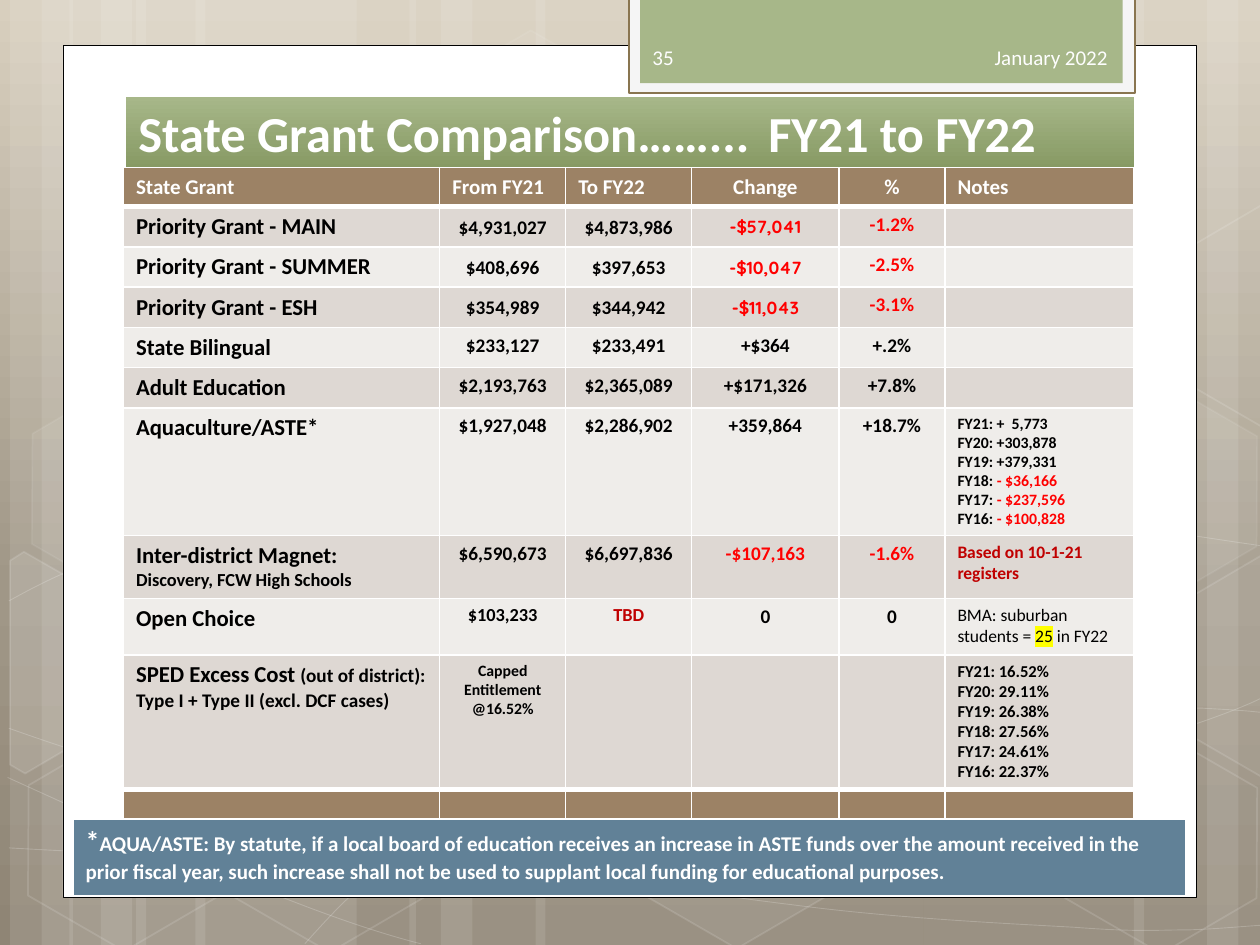
from dataclasses import dataclass
from typing import Optional

from lxml import etree
from pptx import Presentation
from pptx.dml.color import RGBColor
from pptx.enum import shapes, text
from pptx.oxml.ns import qn
from pptx.util import Inches, Pt


class Theme:
    FONT, ALT_FONT = "Calibri", "Quicksand"
    WHITE, BLACK, OFF_WHITE, TAB = "FFFFFF", "000000", "FEFEFE", "F5F5F5"
    GREEN, DARK_GREEN, TAB_LINE = "A7B789", "879A64", "897550"
    BROWN, BAND, LIGHT_BAND, BLUE = "9C8265", "DED8D3", "EFEDEA", "618197"
    RED, DARK_RED, YELLOW = "FF0000", "C00000", "FFFF00"
    BACKDROP = ((0, "D8CFBE"), (62, "A09787"), (100, "8F8575"))
    TITLE, GRANT, BODY, SMALL, HEADER = 28.8, 13, 11, 10.5, 12
    NOTE, HISTORY, FINE, STAR, EMPTY = 10, 9.5, 9, 16, 8


@dataclass
class Span:
    words: str
    size: float
    color: str = Theme.BLACK
    bold: bool = True
    font: str = Theme.FONT
    highlight: Optional[str] = None


def rgb(code):
    return RGBColor.from_string(code)


def child(parent, tag, **attributes):
    return etree.SubElement(parent, qn(tag), **attributes)


def set_alpha(color_parent, percent):
    color = color_parent.find(".//" + qn("a:srgbClr"))
    child(color, "a:alpha", val=str(percent * 1000))


def set_gradient(fill, owner, stops):
    """Fill downwards with (percent, colour) stops; owner holds the fill's XML."""
    fill.gradient()
    fill.gradient_angle = 270
    stop_list = owner.find(".//" + qn("a:gsLst"))
    for old in list(stop_list):
        stop_list.remove(old)
    for percent, color in stops:
        stop = child(stop_list, "a:gs", pos=str(percent * 1000))
        child(stop, "a:srgbClr", val=color)


def paint(shape, fill=None, fill_alpha=100, line=None, width=1, line_alpha=100):
    shape.shadow.inherit = False
    if fill:
        shape.fill.solid()
        shape.fill.fore_color.rgb = rgb(fill)
        if fill_alpha < 100:
            set_alpha(shape._element.spPr.find(qn("a:solidFill")), fill_alpha)
    else:
        shape.fill.background()
    if line:
        shape.line.color.rgb = rgb(line)
        shape.line.width = Pt(width)
        if line_alpha < 100:
            set_alpha(shape._element.spPr.find(qn("a:ln")), line_alpha)
    else:
        shape.line.fill.background()
    return shape


def add_preset(slide, box, kind=shapes.MSO_SHAPE.RECTANGLE):
    return slide.shapes.add_shape(kind, *map(Inches, box))


def add_outline(slide, points, close):
    corners = [(Inches(x), Inches(y)) for x, y in points]
    builder = slide.shapes.build_freeform(*corners[0])
    builder.add_line_segments(corners[1:], close=close)
    return builder.convert_to_shape()


def add_curve(slide, start, *segments):
    """Draw a chain of cubic curves, each given as two control points and an end."""
    curve = add_outline(slide, [start, *(segment[4:] for segment in segments)], False)
    lines = list(curve._element.iter(qn("a:lnTo")))
    for line, segment in zip(lines, segments):
        line.tag = qn("a:cubicBezTo")
        line.remove(line[0])
        for x, y in zip(segment[::2], segment[1::2]):
            child(line, "a:pt", x=str(Inches(x) - curve.left), y=str(Inches(y) - curve.top))
    return curve


def write(frame, paragraphs, align=None, spacing=None):
    """Write a list of paragraphs, each a list of spans."""
    frame.word_wrap = True
    for index, spans in enumerate(paragraphs):
        paragraph = frame.add_paragraph() if index else frame.paragraphs[0]
        paragraph.alignment = align
        paragraph.line_spacing = spacing
        for span in spans:
            run = paragraph.add_run()
            run.text = span.words
            font = run.font
            font.size, font.bold, font.name = Pt(span.size), span.bold, span.font
            font.color.rgb = rgb(span.color)
            if span.highlight:
                mark = etree.Element(qn("a:highlight"))
                child(mark, "a:srgbClr", val=span.highlight)
                run._r.rPr.find(qn("a:solidFill")).addnext(mark)


def style_cell(cell, fill, top=1, bottom=1):
    properties = cell._tc.get_or_add_tcPr()
    for side, width in (("L", 1), ("R", 1), ("T", top), ("B", bottom)):
        border = child(properties, "a:ln" + side, w=str(Pt(width)))
        child(child(border, "a:solidFill"), "a:srgbClr", val=Theme.WHITE)
    cell.fill.solid()
    cell.fill.fore_color.rgb = rgb(fill)


def add_grid(slide, left, top, widths, heights):
    table = slide.shapes.add_table(len(heights), len(widths), Inches(left), Inches(top),
                                   Inches(sum(widths)), Inches(sum(heights))).table
    table.first_row = table.horz_banding = False
    for column, width in zip(table.columns, widths):
        column.width = Inches(width)
    for row, height in zip(table.rows, heights):
        row.height = Inches(height)
    return table


def add_backdrop(slide):
    set_gradient(slide.background.fill, slide._element, Theme.BACKDROP)
    for left, width in ((1.08, 1.75), (0.08, 0.5), (0.33, 0.83), (1.55, 1.75), (0.55, 0.5),
                        (0.8, 0.83), (7.33, 1.75), (9.58, 0.5), (9, 0.83), (4.25, 3.08),
                        (3.25, 0.5), (3.5, 0.83)):
        paint(add_preset(slide, (left, 0, width, 7.5)), Theme.WHITE, 10)
    curves = (
        ((0.07, 6.73), (0.61, 6.76, 1.15, 6.79, 1.9, 6.78), (2.65, 6.77, 3.58, 6.75, 4.58, 6.65),
         (5.58, 6.55, 7, 6.36, 7.92, 6.17), (8.83, 5.98, 9.77, 5.68, 10.07, 5.51)),
        ((0.07, 4.77), (0.36, 4.61, 0.65, 4.46, 1.21, 4.31), (1.78, 4.16, 2.59, 3.94, 3.47, 3.87),
         (4.36, 3.8, 5.44, 3.79, 6.54, 3.87), (7.64, 3.95, 9.47, 4.26, 10.07, 4.34)),
        ((0.06, 6.17), (1.27, 6.72, 2.47, 7.27, 3.34, 7.49)),
        ((0.07, 5.78), (0.38, 5.89, 0.7, 6, 1.28, 6.16), (1.86, 6.31, 2.73, 6.56, 3.57, 6.73),
         (4.4, 6.9, 5.45, 7.08, 6.28, 7.18), (7.11, 7.29, 8, 7.33, 8.53, 7.36),
         (9.05, 7.4, 9.19, 7.38, 9.45, 7.38), (9.71, 7.37, 9.89, 7.35, 10.07, 7.34)),
        ((2.42, 7.49), (2.6, 7.29, 2.78, 7.09, 3.02, 6.91), (3.26, 6.73, 3.6, 6.53, 3.88, 6.39),
         (4.16, 6.25, 4.33, 6.19, 4.7, 6.09), (5.06, 5.99, 5.73, 5.85, 6.08, 5.78),
         (6.44, 5.71, 6.49, 5.71, 6.8, 5.69), (7.11, 5.66, 7.6, 5.63, 7.94, 5.62),
         (8.29, 5.61, 8.86, 5.62, 8.86, 5.62), (8.86, 5.62, 9.53, 5.62, 9.53, 5.62),
         (9.71, 5.63, 9.88, 5.64, 9.97, 5.65), (10.06, 5.66, 10.03, 5.65, 10.06, 5.66)))
    for curve in curves:
        paint(add_curve(slide, *curve), None, 100, Theme.WHITE, 0.5, 20)
    for left, top, alpha, line_alpha in (
            (3.34, 0.36, 4, 8), (4.97, 5.89, 6, 12), (0.11, 5.91, 0, 12), (0.14, 3.12, 7, 8),
            (1.74, 5.92, 0, 12), (7.53, 4.53, 10, 12), (8.34, 5.93, 0, 12), (8.34, 3.14, 7, 8)):
        hexagon = add_preset(slide, (left, top, 1.75, 1.52), shapes.MSO_SHAPE.HEXAGON)
        hexagon.rotation = 30
        hexagon.adjustments[0], hexagon.adjustments[1] = 0.285, 1.155
        paint(hexagon, Theme.WHITE if alpha else None, alpha, Theme.WHITE, 1, line_alpha)
    for alpha, points in (
            (10, ((0.08, 4.45), (0.19, 4.38), (0.96, 4.82), (0.95, 5.7), (0.2, 6.14), (0.08, 6.07))),
            (4, ((9.26, 4.85), (10.01, 4.41), (10.09, 4.46), (10.09, 6.13), (10.02, 6.17), (9.26, 5.73))),
            (0, ((9.26, 2.07), (10.01, 1.63), (10.1, 1.68), (10.09, 3.35), (10.02, 3.39), (9.26, 2.95)))):
        paint(add_outline(slide, points, True), Theme.WHITE if alpha else None, alpha, Theme.WHITE, 1, 12)


def add_page_tab(slide, left, width):
    paint(add_preset(slide, (left, -0.02, width, 0.76)), Theme.TAB, line=Theme.TAB_LINE, width=1.25)
    paint(add_preset(slide, (left + 0.09, -0.02, width - 0.19, 0.68)), Theme.GREEN)
    for words, x, w, align in (("January 2022", left + 1.57, 2.33, text.PP_ALIGN.RIGHT),
                               ("35", left + 0.09, 1.46, text.PP_ALIGN.LEFT)):
        frame = slide.shapes.add_textbox(*map(Inches, (x, 0.25, w, 0.4))).text_frame
        frame.vertical_anchor = text.MSO_ANCHOR.MIDDLE
        write(frame, [[Span(words, Theme.HEADER, Theme.OFF_WHITE, False)]], align)


def add_title(slide, box):
    banner = paint(add_preset(slide, box))
    set_gradient(banner.fill, banner._element, ((0, Theme.GREEN), (100, Theme.DARK_GREEN)))
    banner.text_frame.vertical_anchor = text.MSO_ANCHOR.MIDDLE
    write(banner.text_frame, [[Span("State Grant Comparison……... \tFY21 to FY22", Theme.TITLE, Theme.WHITE)]],
          text.PP_ALIGN.LEFT)


HEADINGS = ("State Grant", "From FY21", "To FY22", "Change", "%", "Notes")
ASTE_HISTORY = [[Span(f"FY{year}: ", Theme.FINE),
                 Span(change, Theme.FINE, Theme.RED if change[0] == "-" else Theme.BLACK)]
                for year, change in ((21, "+  5,773"), (20, "+303,878"), (19, "+379,331"),
                                     (18, "- $36,166"), (17, "- $237,596"), (16, "- $100,828"))]
SPED_HISTORY = [[Span(f"FY{year}: {share}%", Theme.HISTORY)] for year, share in
                ((21, 16.52), (20, 29.11), (19, 26.38), (18, 27.56), (17, 24.61), (16, 22.37))]
CAPPED = [[Span(words, Theme.FINE)] for words in ("Capped Entitlement", "@16.52%")]
MAGNET = [[Span("Inter-district Magnet:", Theme.GRANT)], [Span("Discovery, FCW High Schools", Theme.SMALL)]]
SPED = [[Span("SPED Excess Cost ", Theme.GRANT),
         Span("(out of district): Type I + Type II (excl. DCF cases)", Theme.BODY)]]
CHOICE_NOTE = [[Span("BMA: suburban students = ", Theme.NOTE, bold=False),
                Span("25", Theme.NOTE, bold=False, highlight=Theme.YELLOW),
                Span(" in FY22", Theme.NOTE, bold=False)]]
GRANTS = (
    ("Priority Grant - MAIN", "$4,931,027", "$4,873,986", "-$57,041", "-1.2%", ""),
    ("Priority Grant - SUMMER", "$408,696", "$397,653", "-$10,047", "-2.5%", ""),
    ("Priority Grant - ESH", "$354,989", "$344,942", "-$11,043", "-3.1%", ""),
    ("State Bilingual", "$233,127", "$233,491", "+$364", "+.2%", ""),
    ("Adult Education", "$2,193,763", "$2,365,089", "+$171,326", "+7.8%", ""),
    ("Aquaculture/ASTE*", "$1,927,048", "$2,286,902", "+359,864", "+18.7%", ASTE_HISTORY),
    (MAGNET, "$6,590,673", "$6,697,836", "-$107,163", "-1.6%",
     [[Span("Based on 10-1-21 registers", Theme.NOTE, Theme.DARK_RED)]]),
    ("Open Choice", [[Span("$103,233", Theme.SMALL)]], [[Span("TBD", Theme.SMALL, Theme.DARK_RED)]],
     "0", "0", CHOICE_NOTE),
    (SPED, CAPPED, "", "", "", SPED_HISTORY))


def add_grants(slide, left, top):
    table = add_grid(slide, left, top, (2.51, 1, 1, 1.17, 0.84, 1.5),
                     (0.31, *[0.32] * 5, 1.01, 0.5, 0.45, 1.07, 0.22))
    last = len(GRANTS) + 1
    for r, row in enumerate((HEADINGS, *GRANTS, [""] * len(HEADINGS))):
        for c, content in enumerate(row):
            cell = table.cell(r, c)
            fill = Theme.BROWN if r in (0, last) else (Theme.LIGHT_BAND, Theme.BAND)[r % 2]
            style_cell(cell, fill, 3 if r in (1, last) else 1, 3 if r in (0, last - 1) else 1)
            if not content:
                child(cell.text_frame.paragraphs[0]._p, "a:endParaRPr", sz=str(Theme.EMPTY * 100))
                continue
            priority = 1 <= r <= 3 and 1 <= c <= 3
            if r == 0 or priority:
                cell.vertical_anchor = text.MSO_ANCHOR.MIDDLE
            if priority:
                cell.margin_left = cell.margin_right = Inches(0.07)
                cell.margin_top = cell.margin_bottom = 0
            if isinstance(content, str):
                span = Span(content, Theme.BODY if c else Theme.GRANT)
                if r == 0:
                    span.size, span.color = Theme.HEADER, Theme.WHITE
                elif content[0] == "-":
                    span.color = Theme.RED
                if priority and c == 3:
                    span.size, span.font = Theme.NOTE, Theme.ALT_FONT
                content = [[span]]
            centered = c in (3, 4) or (r and c in (1, 2))
            write(cell.text_frame, content, text.PP_ALIGN.CENTER if centered else None,
                  1.07 if priority else None)


def add_footnote(slide, left, top):
    cell = add_grid(slide, left, top, [8.83], [0.61]).cell(0, 0)
    style_cell(cell, Theme.BLUE)
    note = ("AQUA/ASTE: By statute, if a local board of education receives an increase in ASTE funds over "
            "the amount received in the prior fiscal year, such increase shall not be used to supplant "
            "local funding for educational purposes.")
    write(cell.text_frame, [[Span("*", Theme.STAR, Theme.WHITE), Span(note, Theme.HEADER, Theme.WHITE)]])


def main():
    deck = Presentation()
    deck.slide_width, deck.slide_height = Inches(10), Inches(7.5)
    slide = deck.slides.add_slide(deck.slide_layouts[6])
    add_backdrop(slide)
    paint(add_preset(slide, (0.5, 0.36, 9, 6.76)), Theme.WHITE, line=Theme.BLACK, width=0.5)
    add_page_tab(slide, 4.99, 4.02)
    add_title(slide, (1, 0.77, 8, 0.56))
    add_grants(slide, 0.98, 1.33)
    add_footnote(slide, 0.58, 6.5)
    deck.save("out.pptx")


if __name__ == "__main__":
    main()
